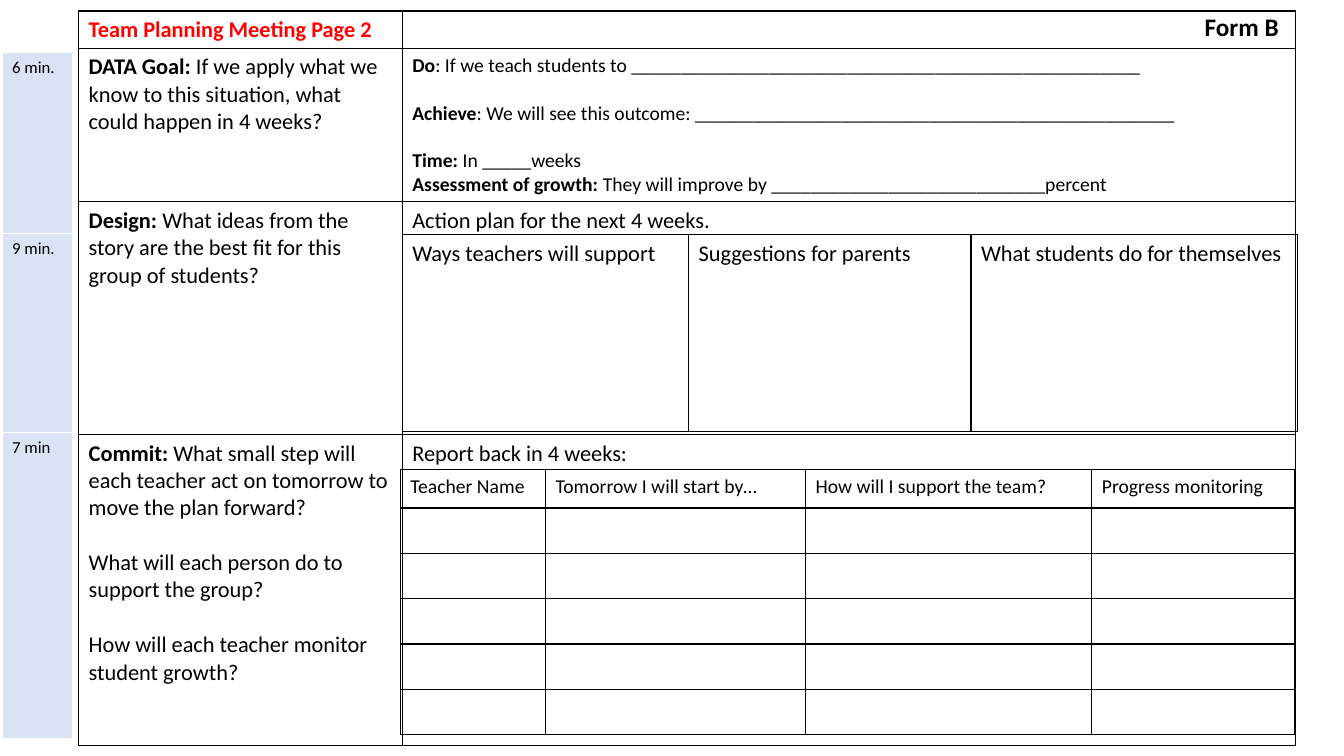
from pptx import Presentation
from pptx.dml.color import RGBColor
from pptx.enum.text import MSO_AUTO_SIZE
from pptx.util import Inches, Pt
from lxml.etree import fromstring

NS = "http://schemas.openxmlformats.org/drawingml/2006/main"
INK = "000000"
TINT = "DAE3F3"


def write(frame, text, size, color=INK):
    """One paragraph per line; 'bold|plain' splits runs, a blank line is a gap."""
    gap, first = 0, True
    for line in text.split("\n"):
        if not line and not first:
            gap = size * 1.22
            continue
        para = frame.paragraphs[0] if first else frame.add_paragraph()
        para.font.name = "Calibri"
        para.font.size = Pt(size)
        para.font.color.rgb = RGBColor.from_string(color)
        para.space_before = Pt(gap)
        lead, bar, rest = line.partition("|")
        for part, bold in ((lead, bool(bar)), (rest, False)):
            if part:
                run = para.add_run()
                run.text = part
                run.font.bold = bold
        gap, first = 0, False


def grid(left, top, cols, rows, texts, size, edge=INK, fill=None):
    """Add a ruled table; cells beyond the given texts stay blank."""
    frame = slide.shapes.add_table(len(rows), len(cols), Inches(left), Inches(top),
                                   Inches(sum(cols)), Inches(sum(rows)))
    table = frame.table
    table.first_row = table.horz_banding = False
    for col, wide in zip(table.columns, cols):
        col.width = Inches(wide)
    for row, high in zip(table.rows, rows):
        row.height = Inches(high)
    for i, cell in enumerate(table.iter_cells()):
        write(cell.text_frame, texts[i] if i < len(texts) else "", size)
        if fill:
            cell.fill.solid()
            cell.fill.fore_color.rgb = RGBColor.from_string(fill)
        else:
            cell.fill.background()
        props = cell._tc.get_or_add_tcPr()
        for n, side in enumerate("LRTB"):
            props.insert(n, fromstring(
                f'<a:ln{side} xmlns:a="{NS}" w="12700"><a:solidFill>'
                f'<a:srgbClr val="{edge}"/></a:solidFill></a:ln{side}>'))
    return table


deck = Presentation()
deck.slide_width, deck.slide_height = Inches(13.33), Inches(7.5)
slide = deck.slides.add_slide(deck.slide_layouts[6])

# Main form: prompts on the left, answers on the right
form = grid(0.78, 0.11, [3.21, 8.86], [0.37, 1.52, 2.31, 3.08], [
    "", "",
    "DATA Goal:| If we apply what we know to this situation, "
    "what could happen in 4 weeks?", "",
    "Design: |What ideas from the story are the best fit for this group of students?",
    "Action plan for the next 4 weeks.",
    "Commit: |What small step will each teacher act on tomorrow "
    "to move the plan forward?\n\n"
    "What will each person do to support the group?\n\n"
    "How will each teacher monitor student growth?",
    "Report back in 4 weeks:",
], 16)
write(form.cell(0, 0).text_frame, "Team Planning Meeting Page 2|", 16, "FF0000")
write(form.cell(1, 1).text_frame,
      "Do|: If we teach students to " + "_" * 52 + "\n\n"
      "Achieve|: We will see this outcome: " + "_" * 49 + "\n\n"
      "Time: |In _____weeks\n"
      "Assessment of growth: |They will improve by " + "_" * 28 + "percent", 14)

# Minutes for each part
grid(0.02, 0.52, [0.7], [1.8, 1.97, 3.04], ["6 min.", "9 min.", "7 min"],
     12, "FFFFFF", TINT)

# Commitments, one row per teacher
grid(3.97, 4.66, [1.44, 2.58, 2.84, 2.01], [0.38] + [0.45] * 5,
     ["Teacher Name", "Tomorrow I will start by…",
      "How will I support the team?", "Progress monitoring"], 14)

# Action plan
grid(3.99, 2.33, [2.84, 2.8, 3.24], [1.95],
     ["Ways teachers will support", "Suggestions for parents",
      "What students do for themselves"], 16)

# Form label
label = slide.shapes.add_textbox(Inches(11.85), Inches(0.06), Inches(0.94), Inches(0.4))
label.text_frame.word_wrap = False
label.text_frame.auto_size = MSO_AUTO_SIZE.SHAPE_TO_FIT_TEXT
write(label.text_frame, "Form B|", 18)

deck.save("out.pptx")
